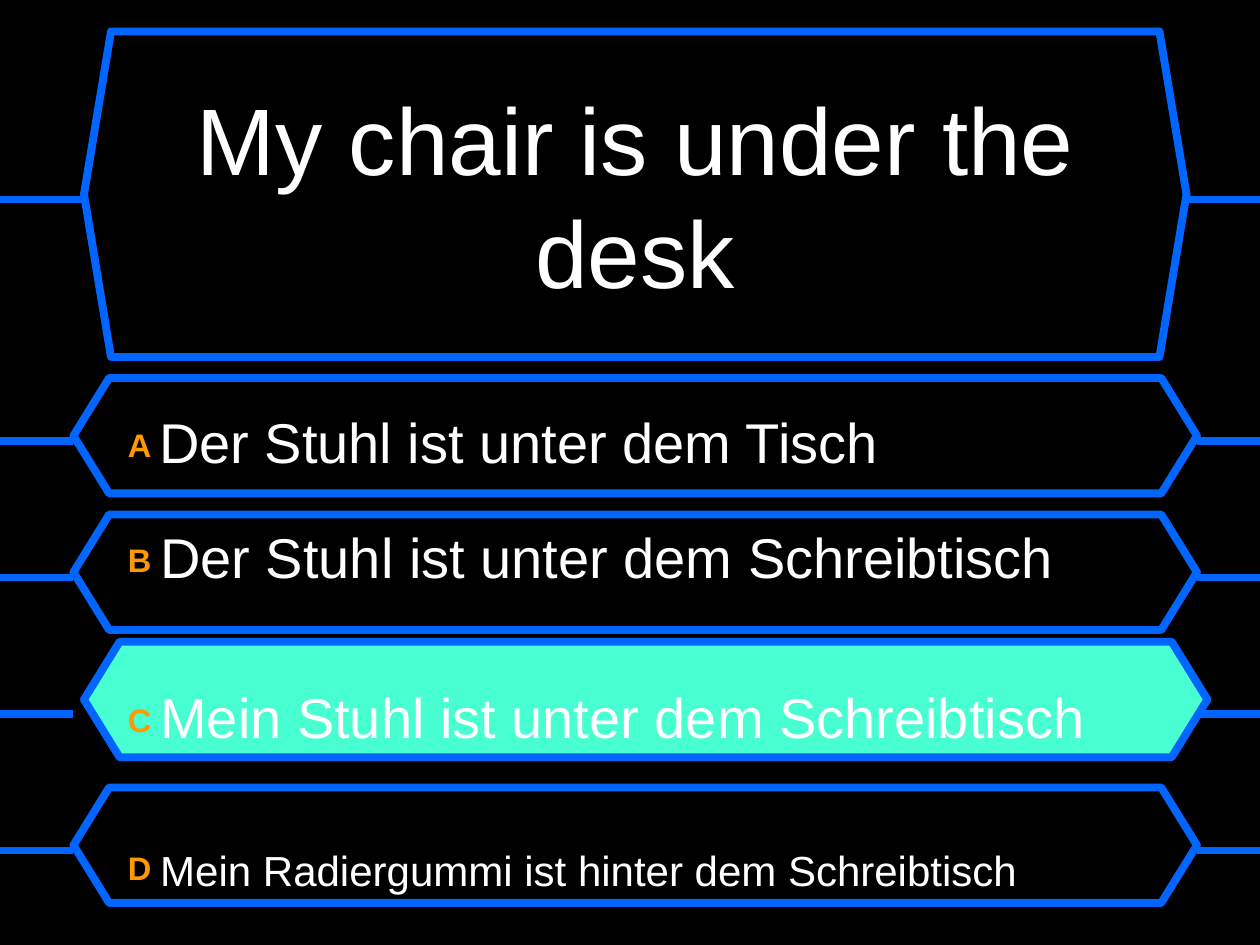
from pptx import Presentation
from pptx.dml.color import RGBColor
from pptx.enum.shapes import MSO_CONNECTOR, MSO_SHAPE
from pptx.enum.text import MSO_ANCHOR, PP_ALIGN
from pptx.oxml.ns import qn
from pptx.util import Pt
from lxml import etree

PX = 9525
HEXAGON = MSO_SHAPE.HEXAGON
STRAIGHT = MSO_CONNECTOR.STRAIGHT
MIDDLE = MSO_ANCHOR.MIDDLE
CENTER = PP_ALIGN.CENTER
COLORS = {
    "background": "000000",
    "outline": "0066FF",
    "correct": "47FFD1",
    "letter": "FF9900",
    "text": "FFFFFF",
}


def color(name):
    return RGBColor.from_string(COLORS[name])


def add_run(paragraph, text, size, name, bold=False):
    run = paragraph.add_run()
    run.text = text
    run.font.name = "Arial"
    run.font.size = Pt(size)
    run.font.bold = bold
    run.font.color.rgb = color(name)
    return run


prs = Presentation()
prs.slide_width = 960 * PX
prs.slide_height = 720 * PX
slide = prs.slides.add_slide(prs.slide_layouts[6])
slide.background.fill.solid()
slide.background.fill.fore_color.rgb = color("background")

frames = [
    (56, 288, 856, 88, 0.309, "background"),
    (56, 392, 856, 88, 0.309, "background"),
    (64, 489, 856, 88, 0.309, "correct"),
    (64, 24, 840, 248, 0.083, "background"),
    (56, 600, 856, 88, 0.309, "background"),
]
for left, top, width, height, slant, fill in frames:
    frame = slide.shapes.add_shape(HEXAGON, left * PX, top * PX, width * PX, height * PX)
    frame.adjustments[0] = slant
    frame.adjustments[1] = 1.155
    frame.shadow.inherit = False
    frame.fill.solid()
    frame.fill.fore_color.rgb = color(fill)
    frame.line.color.rgb = color("outline")
    frame.line.width = Pt(4.5)

question = slide.shapes.add_textbox(80 * PX, 40 * PX, 808 * PX, 216 * PX).text_frame
question.word_wrap = True
question.vertical_anchor = MIDDLE
question.paragraphs[0].alignment = CENTER
add_run(question.paragraphs[0], "My chair is under the desk", 54, "text")

answers = [
    ("A", "Der Stuhl ist unter dem Tisch", 32, 1.5, 8),
    ("B", "Der Stuhl ist unter dem Schreibtisch", 32, 1.5, 8),
    ("C", "Mein Stuhl ist unter dem Schreibtisch", 32, 1, 53),
    ("D", "Mein Radiergummi ist hinter dem Schreibtisch", 24, 2, 8),
]
choices = slide.shapes.add_textbox(88 * PX, 280 * PX, 800 * PX, 416 * PX).text_frame
choices.word_wrap = True
for index, (letter, answer, size, spacing, gap) in enumerate(answers):
    choice = choices.add_paragraph() if index else choices.paragraphs[0]
    choice.line_spacing = float(spacing)
    choice.space_before = Pt(gap)
    indent = choice._p.get_or_add_pPr()
    indent.set("marL", str(36 * PX))
    indent.set("indent", str(-36 * PX))
    marker = add_run(choice, letter + " ", 32, "letter", True)
    marker.font._element.set("baseline", "10000")
    add_run(choice, answer, size, "text")

wires = [(start, end, 336 + 104 * row) for row in range(4) for start, end in ((56, 0), (960, 912))]
wires += [(64, 0, 152), (960, 904, 152)]
for start, end, y in wires:
    wire = slide.shapes.add_connector(STRAIGHT, start * PX, y * PX, end * PX, y * PX)
    wire.line.color.rgb = color("outline")
    wire.line.width = Pt(4.5)
    etree.SubElement(wire._element.spPr, qn("a:effectLst"))

prs.save("out.pptx")
